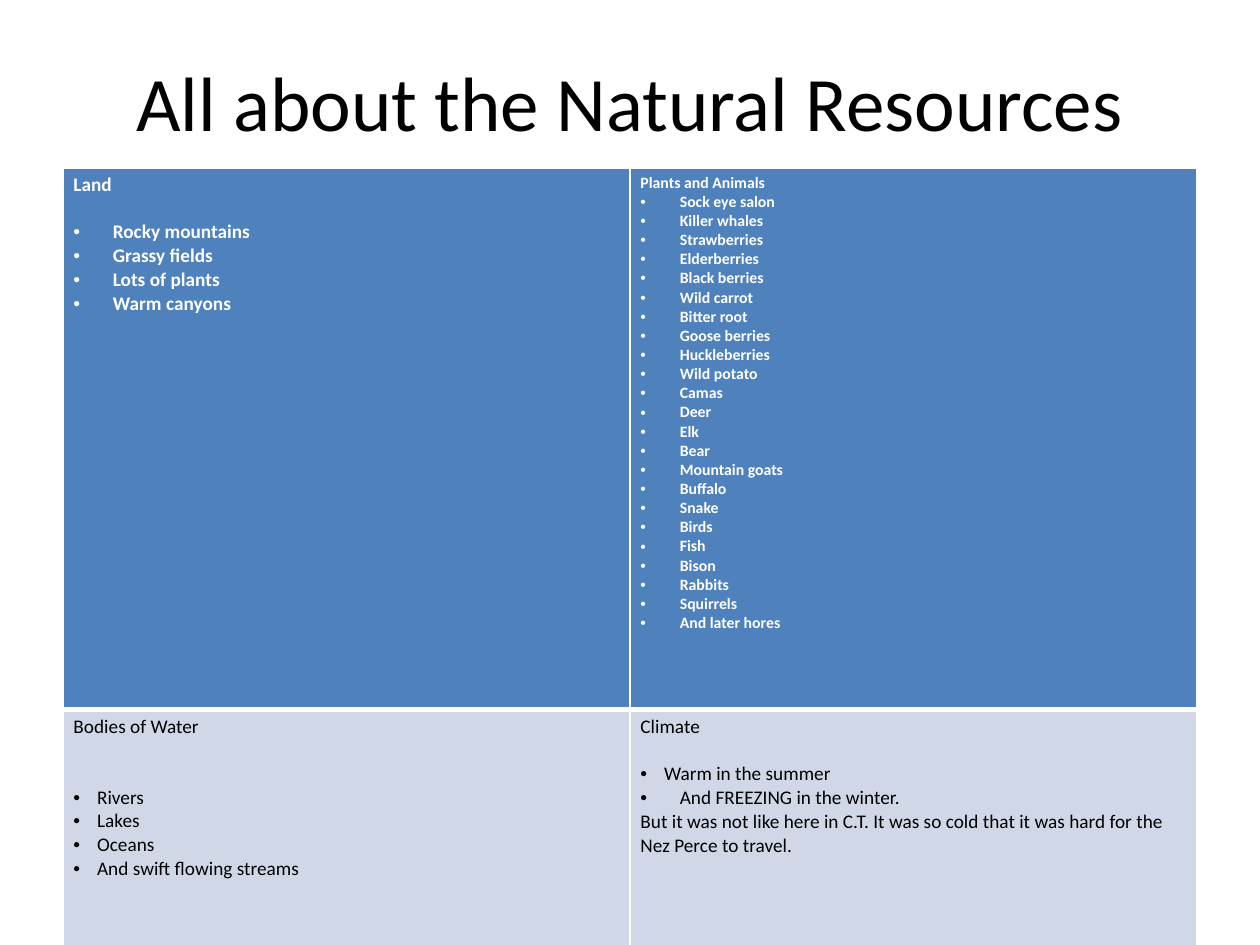
from dataclasses import dataclass

from lxml.etree import SubElement
from pptx import Presentation
from pptx.dml.color import RGBColor
from pptx.enum.text import MSO_ANCHOR, PP_ALIGN
from pptx.oxml.ns import qn
from pptx.util import Pt

WHITE = RGBColor(0xFF, 0xFF, 0xFF)
BLACK = RGBColor(0, 0, 0)
BLUE = RGBColor(0x4F, 0x81, 0xBD)
PALE_BLUE = RGBColor(0xD0, 0xD8, 0xE8)

WIDE_INDENT = Pt(22.5)
NARROW_INDENT = Pt(13.5)
BLANK_LINE = Pt(13.4)
THIN, THICK = Pt(1), Pt(3)


@dataclass
class Line:
    text: str
    indent: int = 0
    space_before: int = 0


@dataclass
class RowStyle:
    height: int
    fill: RGBColor
    color: RGBColor
    bold: bool
    top: int
    bottom: int


@dataclass
class Topic:
    lines: list[Line]
    size: int = Pt(11)


def set_attributes(target, values: dict) -> None:
    for name, value in values.items():
        setattr(target, name, value)


def bullets(texts: list[str], indent: int, gap: int = 0) -> list[Line]:
    """Bulleted lines, with a gap above the first one."""
    return [Line(text, indent, 0 if index else gap) for index, text in enumerate(texts)]


def set_bullet(paragraph, indent: int) -> None:
    properties = paragraph._p.get_or_add_pPr()
    properties.set("marL", str(indent))
    properties.set("indent", str(-indent))
    SubElement(properties, qn("a:buFont"), typeface="Arial")
    SubElement(properties, qn("a:buChar"), char="•")


def set_borders(cell, style: RowStyle) -> None:
    widths = {"lnL": THIN, "lnR": THIN, "lnT": style.top, "lnB": style.bottom}
    properties = cell._tc.get_or_add_tcPr()
    for side, width in widths.items():
        border = SubElement(properties, qn(f"a:{side}"), w=str(width))
        fill = SubElement(border, qn("a:solidFill"))
        SubElement(fill, qn("a:srgbClr"), val=str(WHITE))


def write_line(paragraph, line: Line, size: int, color: RGBColor, bold: bool) -> None:
    paragraph.space_before = line.space_before
    if line.indent:
        set_bullet(paragraph, line.indent)
    run = paragraph.add_run()
    run.text = line.text
    set_attributes(run.font, {"name": "Calibri", "size": size, "bold": bold})
    run.font.color.rgb = color


def fill_cell(cell, topic: Topic, style: RowStyle) -> None:
    set_attributes(cell, {
        "margin_left": Pt(6), "margin_right": Pt(6),
        "margin_top": Pt(3), "margin_bottom": Pt(3),
        "vertical_anchor": MSO_ANCHOR.TOP,
    })
    set_borders(cell, style)
    cell.fill.solid()
    cell.fill.fore_color.rgb = style.fill
    frame = cell.text_frame
    for index, line in enumerate(topic.lines):
        paragraph = frame.add_paragraph() if index else frame.paragraphs[0]
        write_line(paragraph, line, topic.size, style.color, style.bold)


def add_title(slide, text: str) -> None:
    frame = slide.shapes.add_textbox(Pt(36), Pt(12.25), Pt(648), Pt(90)).text_frame
    set_attributes(frame, {"word_wrap": True, "vertical_anchor": MSO_ANCHOR.MIDDLE})
    paragraph = frame.paragraphs[0]
    paragraph.alignment = PP_ALIGN.CENTER
    write_line(paragraph, Line(text), Pt(44), BLACK, False)


def add_topic_table(slide, topics: list[list[Topic]], styles: list[RowStyle]) -> None:
    height = sum(style.height for style in styles)
    table = slide.shapes.add_table(
        len(topics), len(topics[0]), Pt(36), Pt(96), Pt(648), height).table
    set_attributes(table, {"first_row": False, "horz_banding": False})
    for row, row_topics, style in zip(table.rows, topics, styles):
        row.height = style.height
        for cell, topic in zip(row.cells, row_topics):
            fill_cell(cell, topic, style)


LAND = Topic([Line("Land")] + bullets(
    ["Rocky mountains", "Grassy fields", "Lots of plants", "Warm canyons"],
    WIDE_INDENT, BLANK_LINE))
PLANTS_AND_ANIMALS = Topic([Line("Plants and Animals")] + bullets(
    ["Sock eye salon", "Killer whales", "Strawberries", "Elderberries",
     "Black berries", "Wild carrot", "Bitter root", "Goose berries",
     "Huckleberries", "Wild potato", "Camas", "Deer", "Elk", "Bear",
     "Mountain goats", "Buffalo", "Snake", "Birds", "Fish", "Bison",
     "Rabbits", "Squirrels", "And later hores"],
    WIDE_INDENT), Pt(9))
WATER = Topic([Line("Bodies of Water")] + bullets(
    ["Rivers", "Lakes", "Oceans", "And swift flowing streams"],
    NARROW_INDENT, 2 * BLANK_LINE))
CLIMATE = Topic([
    Line("Climate"),
    Line("Warm in the summer", NARROW_INDENT, BLANK_LINE),
    Line("And FREEZING in the winter.", WIDE_INDENT),
    Line("But it was not like here in C.T. It was so cold that it was hard "
         "for the Nez Perce to travel."),
])
ROW_STYLES = [
    RowStyle(Pt(309.6), BLUE, WHITE, True, THIN, THICK),
    RowStyle(Pt(236.2), PALE_BLUE, BLACK, False, THICK, THIN),
]


def main() -> None:
    presentation = Presentation()
    set_attributes(presentation, {"slide_width": Pt(720), "slide_height": Pt(540)})
    slide = presentation.slides.add_slide(presentation.slide_layouts[6])
    add_title(slide, "All about the Natural Resources")
    add_topic_table(slide, [[LAND, PLANTS_AND_ANIMALS], [WATER, CLIMATE]], ROW_STYLES)
    presentation.save("out.pptx")


if __name__ == "__main__":
    main()
